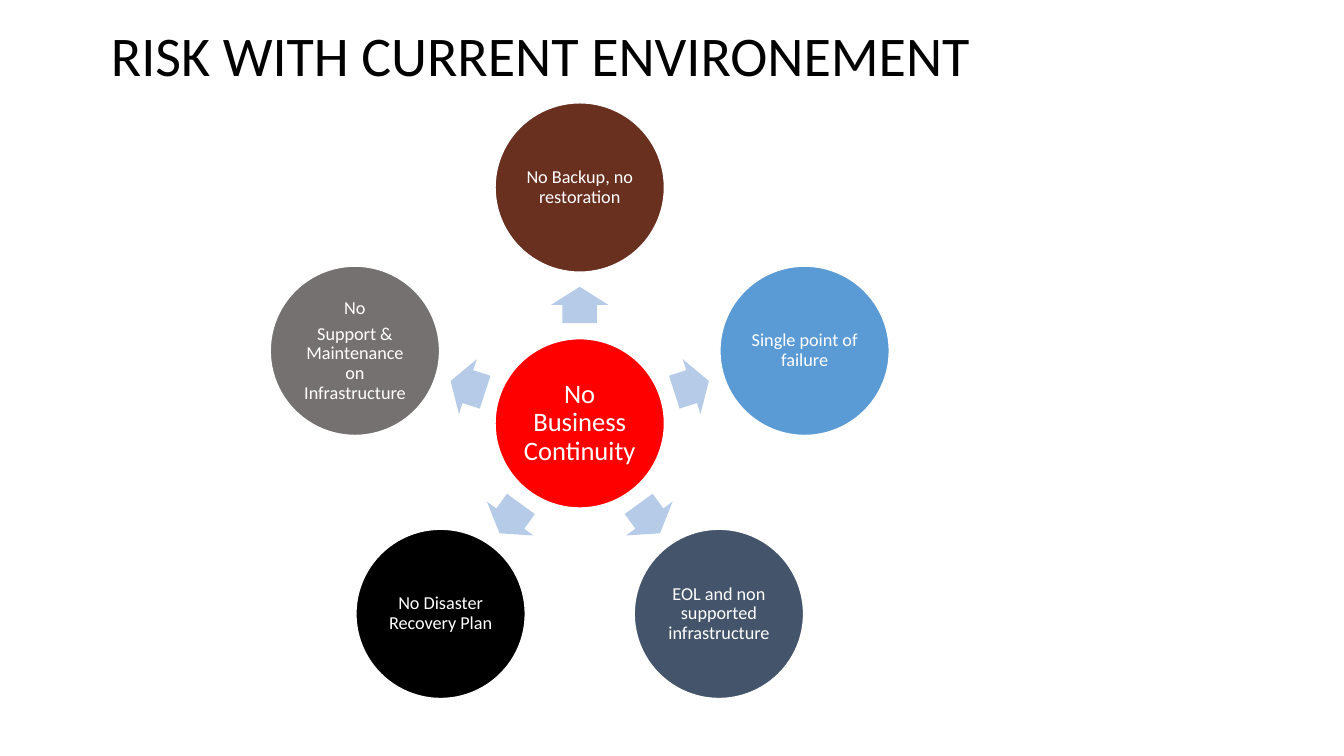
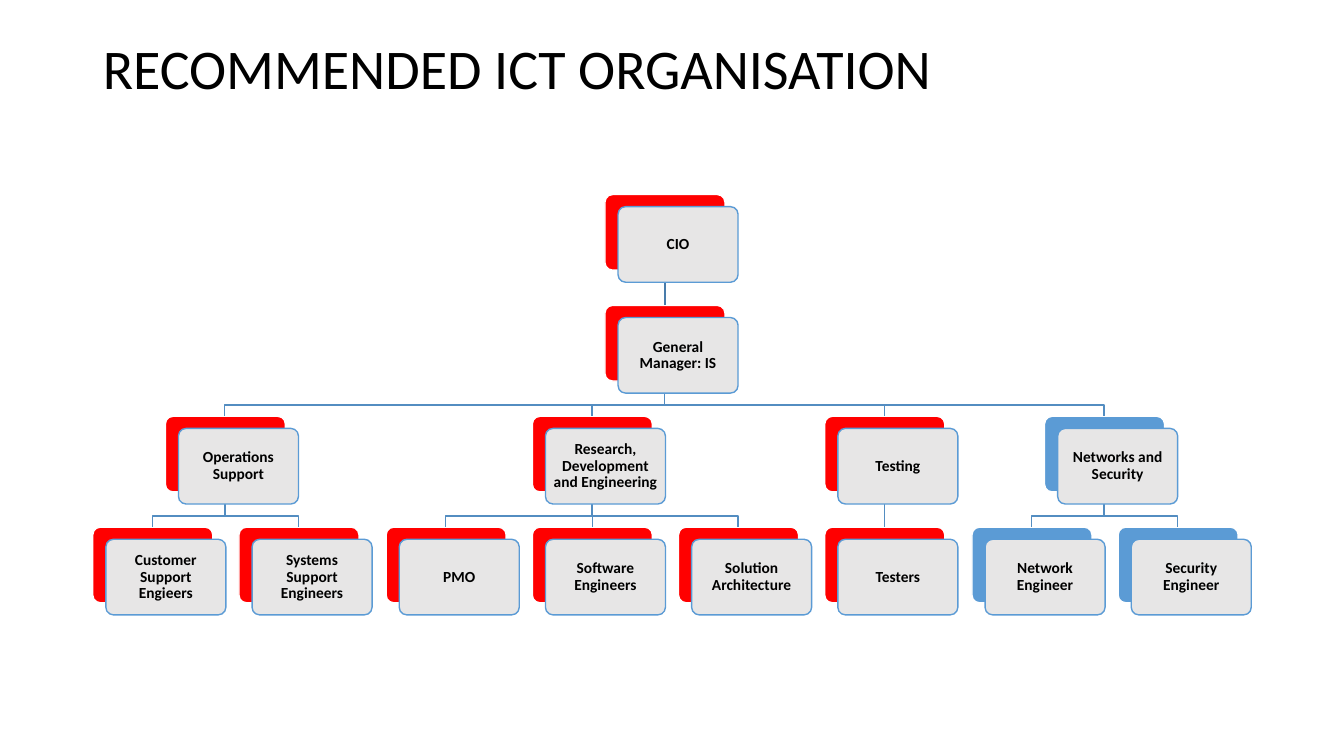
import math
from dataclasses import dataclass
from typing import Any, Iterator

from lxml import etree
from pptx import Presentation
from pptx import util as u
from pptx.dml.color import RGBColor
from pptx.enum import shapes, text
from pptx.oxml.ns import qn

SCALE = 9144


@dataclass(frozen=True)
class Theme:
    font: str = "Calibri"
    black: str = "000000"
    white: str = "FFFFFF"
    red: str = "FF0000"
    blue: str = "5B9BD5"
    brown: str = "693020"
    slate: str = "44546A"
    gray: str = "767171"
    card: str = "E7E6E6"
    arrow: str = "B5CBE7"
    link: str = "538DC1"
    top_link: str = "497CAB"
    title_size: int = 40
    hub_size: int = 19
    risk_size: int = 13
    card_size: int = 11
    line_spacing: float = 0.9
    space_after: float = 0.35
    line_width: int = 1


THEME = Theme()


@dataclass(frozen=True)
class Box:
    left: int
    top: int
    width: int
    height: int

    def emu(self) -> tuple[int, ...]:
        return tuple(px(value) for value in (self.left, self.top, self.width, self.height))


@dataclass(frozen=True)
class Risk:
    label: str
    fill: str


@dataclass(frozen=True)
class Role:
    label: str
    reports: tuple["Role", ...] = ()
    accent: str = THEME.red


@dataclass
class Position:
    role: Role
    left: int
    top: int
    reports: list["Position"]
    panel: Any = None


RISKS = (
    Risk("No Backup, no restoration", THEME.brown),
    Risk("Single point of failure", THEME.blue),
    Risk("EOL and non supported infrastructure", THEME.slate),
    Risk("No Disaster Recovery Plan", THEME.black),
    Risk("No\nSupport & Maintenance on Infrastructure", THEME.gray),
)
HUB = Risk("No Business Continuity", THEME.red)
HUB_X, HUB_Y = 575, 420
CIRCLE = 168
RISK_RADIUS, ARROW_RADIUS = 234, 117
ARROW_LENGTH, ARROW_BREADTH = 36, 57

ORGANISATION = Role("CIO", (
    Role("General Manager: IS", (
        Role("Operations Support", (
            Role("Customer Support Engieers"),
            Role("Systems Support Engineers"),
        )),
        Role("Research, Development and Engineering", (
            Role("PMO"),
            Role("Software Engineers"),
            Role("Solution Architecture"),
        )),
        Role("Testing", (Role("Testers"),)),
        Role("Networks and Security", (
            Role("Network Engineer", accent=THEME.blue),
            Role("Security Engineer", accent=THEME.blue),
        ), THEME.blue),
    )),
))
LEAF_COUNT = 8
FIRST_LEFT, LAST_LEFT = 92, 1109
TREE_TOP, LEVEL_PITCH = 193, 110
PANEL_WIDTH, PANEL_HEIGHT = 119, 75
CARD_SHIFT_X, CARD_SHIFT_Y = 13, 12
ELBOW_DROP = 24
CORNER = 0.1


def px(value: int) -> int:
    return value * SCALE


def apply_format(target: Any, values: dict[str, Any]) -> None:
    for name, value in values.items():
        setattr(target, name, value)


def write_text(shape: Any, label: str, size: int, color: str, margin: int, bold: bool = False) -> None:
    frame = shape.text_frame
    frame.text = label
    apply_format(frame, {
        "word_wrap": True,
        "vertical_anchor": text.MSO_ANCHOR.MIDDLE,
        **{f"margin_{side}": px(margin) for side in ("left", "top", "right", "bottom")},
    })
    for paragraph in frame.paragraphs:
        apply_format(paragraph, {
            "alignment": text.PP_ALIGN.CENTER,
            "line_spacing": THEME.line_spacing,
            "space_after": u.Pt(round(size * THEME.space_after, 1)),
        })
        apply_format(paragraph.font, {"name": THEME.font, "size": u.Pt(size), "bold": bold})
        paragraph.font.color.rgb = RGBColor.from_string(color)


def set_line(shape: Any, color: str) -> None:
    shape.line.color.rgb = RGBColor.from_string(color)
    shape.line.width = u.Pt(THEME.line_width)


def add_shape(slide: Any, kind: Any, box: Box, fill: str, line: str | None = None) -> Any:
    shape = slide.shapes.add_shape(kind, *box.emu())
    shape.shadow.inherit = False
    shape.fill.solid()
    shape.fill.fore_color.rgb = RGBColor.from_string(fill)
    if line:
        set_line(shape, line)
    else:
        shape.line.fill.background()
    return shape


def add_titled_slide(presentation: Any, title: str, box: Box) -> Any:
    slide = presentation.slides.add_slide(presentation.slide_layouts[5])
    shape = slide.shapes.title
    apply_format(shape, dict(zip(("left", "top", "width", "height"), box.emu())))
    frame = shape.text_frame
    frame.text = title
    apply_format(frame, {
        "word_wrap": True,
        "auto_size": text.MSO_AUTO_SIZE.NONE,
        "vertical_anchor": text.MSO_ANCHOR.BOTTOM,
    })
    paragraph = frame.paragraphs[0]
    apply_format(paragraph, {"alignment": text.PP_ALIGN.LEFT, "line_spacing": THEME.line_spacing})
    apply_format(paragraph.font, {"name": THEME.font, "size": u.Pt(THEME.title_size)})
    paragraph.font.color.rgb = RGBColor.from_string(THEME.black)
    return slide


def centred_box(angle: int, radius: int, width: int, height: int) -> Box:
    x = HUB_X + radius * math.cos(math.radians(angle))
    y = HUB_Y + radius * math.sin(math.radians(angle))
    return Box(round(x - width / 2), round(y - height / 2), width, height)


def add_circle(slide: Any, risk: Risk, angle: int, radius: int, size: int, margin: int) -> None:
    box = centred_box(angle, radius, CIRCLE, CIRCLE)
    circle = add_shape(slide, shapes.MSO_SHAPE.OVAL, box, risk.fill, THEME.white)
    write_text(circle, risk.label, size, THEME.white, margin)


def add_risk_wheel(slide: Any) -> None:
    add_circle(slide, HUB, 0, 0, THEME.hub_size, 3)
    for index, risk in enumerate(RISKS):
        angle = index * 360 // len(RISKS) - 90
        box = centred_box(angle, ARROW_RADIUS, ARROW_LENGTH, ARROW_BREADTH)
        arrow = add_shape(slide, shapes.MSO_SHAPE.RIGHT_ARROW, box, THEME.arrow)
        arrow.adjustments[0], arrow.adjustments[1] = 0.6, 0.5
        arrow.rotation = angle % 360
        add_circle(slide, risk, angle, RISK_RADIUS, THEME.risk_size, 2)


def leaf_lefts() -> Iterator[int]:
    for index in range(LEAF_COUNT):
        yield FIRST_LEFT + round((LAST_LEFT - FIRST_LEFT) * index / (LEAF_COUNT - 1))


def place(role: Role, level: int, lefts: Iterator[int]) -> Position:
    reports = [place(report, level + 1, lefts) for report in role.reports]
    left = round((reports[0].left + reports[-1].left) / 2) if reports else next(lefts)
    return Position(role, left, TREE_TOP + level * LEVEL_PITCH, reports)


def walk(position: Position) -> Iterator[Position]:
    yield position
    for report in position.reports:
        yield from walk(report)


def add_rounded(slide: Any, left: int, top: int, fill: str, line: str) -> Any:
    box = Box(left, top, PANEL_WIDTH, PANEL_HEIGHT)
    shape = add_shape(slide, shapes.MSO_SHAPE.ROUNDED_RECTANGLE, box, fill, line)
    shape.adjustments[0] = CORNER
    return shape


def add_link(slide: Any, manager: Position, report: Position, color: str) -> None:
    start_x, end_x = (item.left + PANEL_WIDTH // 2 for item in (manager, report))
    start_y = manager.top + PANEL_HEIGHT
    if start_x == end_x:
        connector = slide.shapes.add_connector(
            shapes.MSO_CONNECTOR.STRAIGHT, px(start_x), px(start_y), px(end_x), px(report.top))
        connector.begin_connect(manager.panel, 2)
        connector.end_connect(report.panel, 0)
        set_line(connector, color)
        etree.SubElement(connector.element.spPr, qn("a:effectLst"))
        return
    elbow_y = start_y + ELBOW_DROP
    builder = slide.shapes.build_freeform(start_x, start_y, scale=SCALE)
    builder.add_line_segments(
        [(start_x, elbow_y), (end_x, elbow_y), (end_x, report.top)], close=False)
    elbow = builder.convert_to_shape()
    elbow.shadow.inherit = False
    elbow.fill.background()
    set_line(elbow, color)


def add_organisation(slide: Any) -> None:
    root = place(ORGANISATION, 0, leaf_lefts())
    positions = list(walk(root))
    for position in positions:
        position.panel = add_rounded(
            slide, position.left, position.top, position.role.accent, THEME.white)
    for position in positions:
        color = THEME.top_link if position is root else THEME.link
        for report in position.reports:
            add_link(slide, position, report, color)
    for position in positions:
        card = add_rounded(slide, position.left + CARD_SHIFT_X, position.top + CARD_SHIFT_Y,
                           THEME.card, THEME.blue)
        write_text(card, position.role.label, THEME.card_size, THEME.black, 5, bold=True)


def main() -> None:
    presentation = Presentation()
    presentation.slide_width, presentation.slide_height = px(1333), px(750)
    add_risk_wheel(add_titled_slide(
        presentation, "RISK WITH CURRENT ENVIRONEMENT", Box(100, 29, 1150, 64)))
    add_organisation(add_titled_slide(
        presentation, "RECOMMENDED ICT ORGANISATION", Box(92, 12, 1150, 94)))
    presentation.save("out.pptx")


if __name__ == "__main__":
    main()
